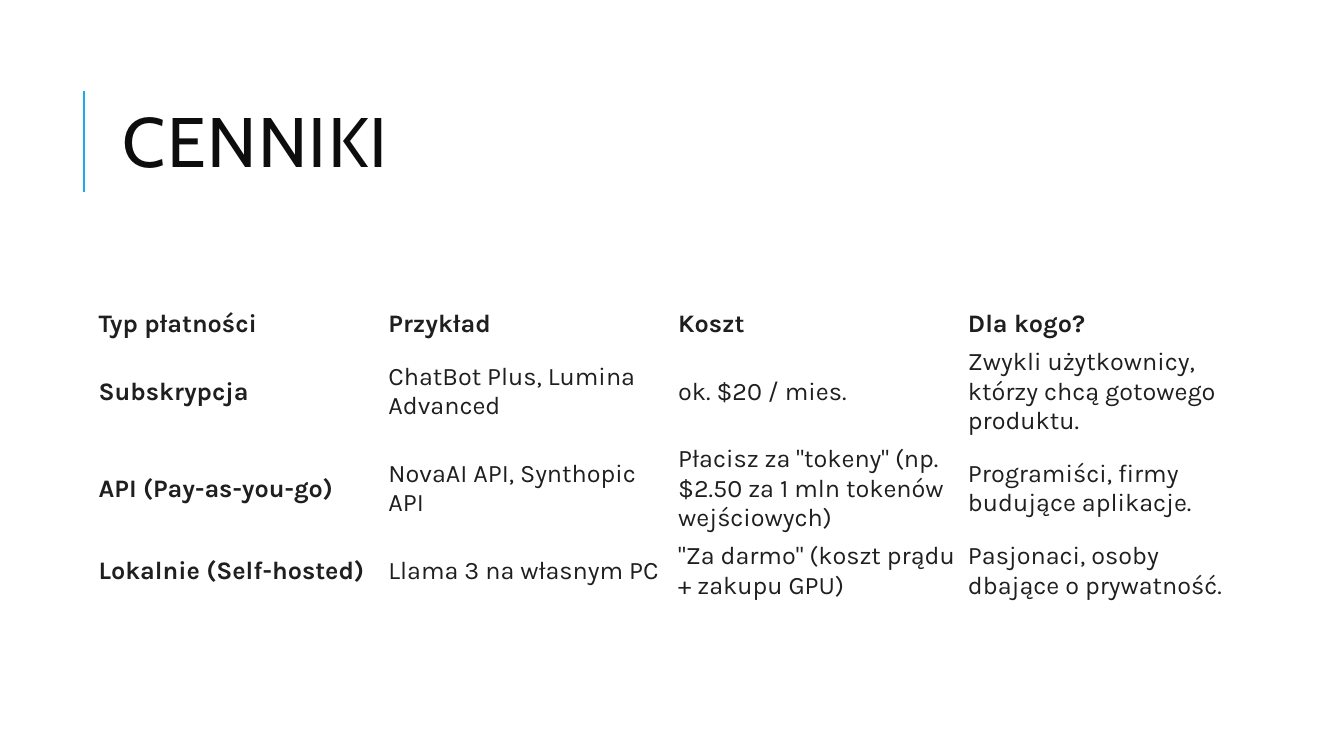
"""Build the price list slide: a title with an accent rule and a table."""
from lxml import etree
from pptx import Presentation
from pptx.dml.color import RGBColor
from pptx.enum import shapes, text
from pptx.oxml import ns
from pptx.util import Pt

HUES = {"accent": "1CADE4", "title": "0D0D0D", "body": "1F1F1F", "edge": "FFFFFF"}
ROWS = [
    ("Typ płatności", "Przykład", "Koszt", "Dla kogo?"),
    ("Subskrypcja", "ChatBot Plus, Lumina Advanced", "ok. $20 / mies.",
     "Zwykli użytkownicy, którzy chcą gotowego produktu."),
    ("API (Pay-as-you-go)", "NovaAI API, Synthopic API",
     'Płacisz za "tokeny" (np. $2.50 za 1 mln tokenów wejściowych)',
     "Programiści, firmy budujące aplikacje."),
    ("Lokalnie (Self-hosted)", "Llama 3 na własnym PC",
     '"Za darmo" (koszt prądu + zakupu GPU)',
     "Pasjonaci, osoby dbające o prywatność."),
]
HIGHS = [27, 69, 69, 48]


def style(font, name, size, hue, bold=False):
    font.name, font.size, font.bold = name, Pt(size), bold
    font.color.rgb = RGBColor.from_string(HUES[hue])


def edge(cell):
    props = cell._tc.get_or_add_tcPr()
    for side in ("a:lnL", "a:lnR", "a:lnT", "a:lnB"):
        line = etree.SubElement(props, ns.qn(side), w=str(Pt(0.33)))
        fill = etree.SubElement(line, ns.qn("a:solidFill"))
        etree.SubElement(fill, ns.qn("a:srgbClr"), val=HUES["edge"])


deck = Presentation()
deck.slide_width, deck.slide_height = Pt(960), Pt(540)
slide = deck.slides.add_slide(deck.slide_layouts[5])

rule = slide.shapes.add_connector(
    shapes.MSO_CONNECTOR.STRAIGHT, Pt(60), Pt(136.8), Pt(60), Pt(64.8))
rule.line.color.rgb = RGBColor.from_string(HUES["accent"])
rule.line.width = Pt(1.5)
etree.SubElement(rule._element.spPr, ns.qn("a:effectLst"))

title = slide.shapes.title
title.left, title.top, title.width, title.height = Pt(80.6), Pt(46), Pt(765.4), Pt(118)
frame = title.text_frame
frame.text = "CENNIKI"
frame.word_wrap = True
frame.auto_size = text.MSO_AUTO_SIZE.NONE
frame.vertical_anchor = text.MSO_ANCHOR.MIDDLE
head = frame.paragraphs[0]
head.alignment = text.PP_ALIGN.LEFT
head.line_spacing = 0.8
style(head.runs[0].font, "Cabin", 50, "title")
head.runs[0].font._element.set("spc", "100")

table = slide.shapes.add_table(
    len(ROWS), len(ROWS[0]), Pt(66), Pt(218), Pt(828), Pt(sum(HIGHS))).table
table.first_row = table.horz_banding = False
for r, (row, high) in enumerate(zip(ROWS, HIGHS)):
    table.rows[r].height = Pt(high)
    for c, words in enumerate(row):
        cell = table.cell(r, c)
        cell.text_frame.text = words
        cell.vertical_anchor = text.MSO_ANCHOR.MIDDLE
        cell.margin_left = cell.margin_right = Pt(4.5)
        cell.margin_top = cell.margin_bottom = Pt(3)
        edge(cell)
        cell.fill.background()
        run = cell.text_frame.paragraphs[0].runs[0]
        style(run.font, "Karla", 18, "body", r == 0 or c == 0)

deck.save("out.pptx")
